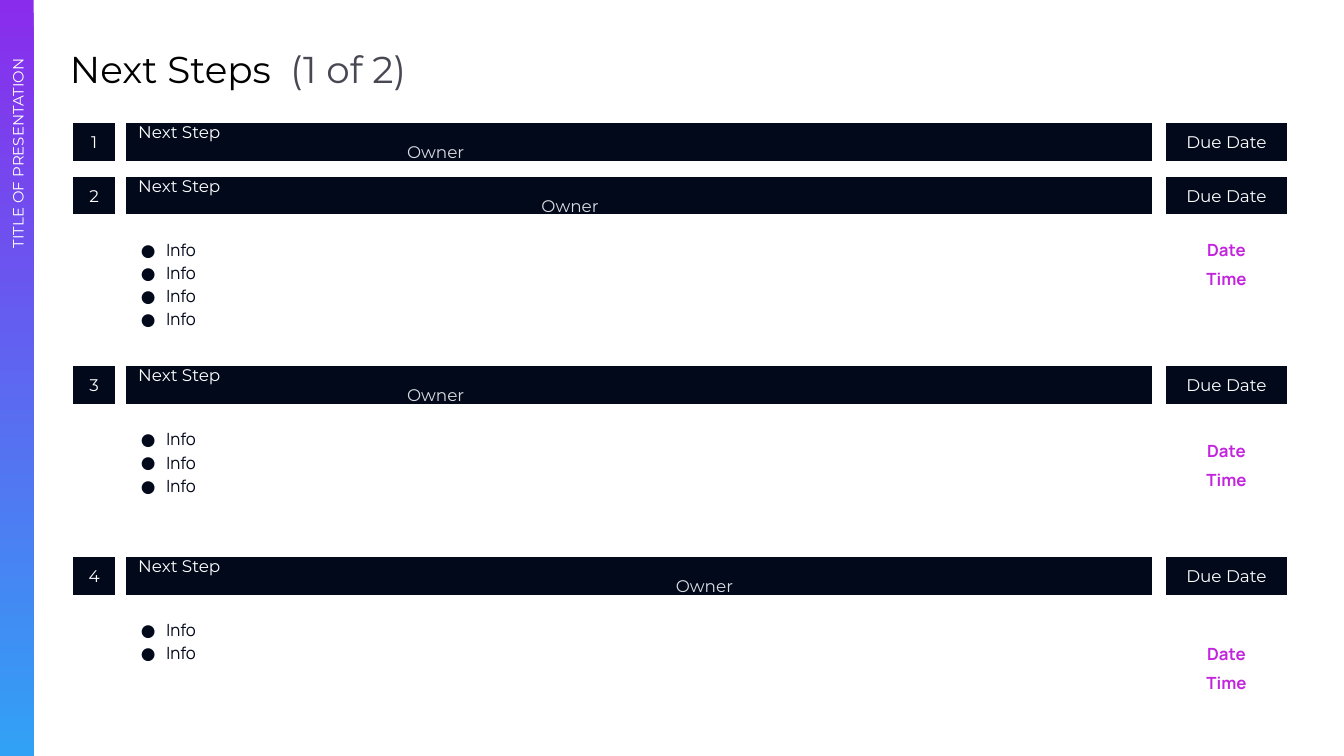
"""Build the "Next Steps (1 of 2)" slide: four numbered steps with owners, info and due dates."""
from lxml import etree
from pptx import Presentation
from pptx.dml.color import RGBColor
from pptx.enum.shapes import MSO_SHAPE
from pptx.enum.text import MSO_ANCHOR, MSO_AUTO_SIZE, PP_ALIGN
from pptx.oxml.ns import qn
from pptx.util import Inches, Pt

RECTANGLE = MSO_SHAPE.RECTANGLE
TOP, MIDDLE = MSO_ANCHOR.TOP, MSO_ANCHOR.MIDDLE
LEFT, CENTER, RIGHT = PP_ALIGN.LEFT, PP_ALIGN.CENTER, PP_ALIGN.RIGHT
NO_AUTOFIT = MSO_AUTO_SIZE.NONE

COLORS = {
    "violet": "8A2CEC",
    "blue": "31A1F5",
    "navy": "02091A",
    "white": "FFFFFF",
    "owner": "DBDCE2",
    "black": "000000",
    "gray": "474853",
    "magenta": "C324DD",
}
HEADING_FONT, BODY_FONT = "Montserrat", "Manrope"
NUMBER_LEFT, STEP_LEFT, INFO_LEFT, DUE_LEFT = 0.54, 0.93, 0.95, 8.67
BAR_HEIGHT, DUE_WIDTH = 0.29, 0.91

STEPS = [
    {"top": 0.91, "owner_tab": 2, "infos": 0},
    {"top": 1.31, "owner_tab": 3, "infos": 4, "date_top": 1.66},
    {"top": 2.72, "owner_tab": 2, "infos": 3, "date_top": 3.16},
    {"top": 4.14, "owner_tab": 4, "infos": 2, "date_top": 4.67},
]


def rgb(name):
    return RGBColor.from_string(COLORS[name])


def write(holder, lines, size, font, color, align=LEFT, anchor=TOP):
    frame = holder.text_frame
    frame.word_wrap = True
    frame.auto_size = NO_AUTOFIT
    frame.vertical_anchor = anchor
    frame.margin_left = frame.margin_right = Inches(0.1)
    frame.margin_top = frame.margin_bottom = Inches(0.1)
    frame.text = "\n".join(lines)
    for paragraph in frame.paragraphs:
        paragraph.alignment = align
        for run in paragraph.runs:
            run.font.size = Pt(size)
            run.font.name = font
            run.font.color.rgb = rgb(color)
    return frame.paragraphs


prs = Presentation()
prs.slide_width = Inches(10)
prs.slide_height = Inches(10) * 9 // 16
slide = prs.slides.add_slide(prs.slide_layouts[5])
shapes = slide.shapes

sidebar = shapes.add_shape(RECTANGLE, 0, 0, Inches(0.25), prs.slide_height)
sidebar.shadow.inherit = False
sidebar.line.fill.background()
sidebar.fill.gradient()
sidebar.fill.gradient_angle = 270
for stop, color, position in zip(sidebar.fill.gradient_stops, ("violet", "blue"), (0, 1)):
    stop.color.rgb = rgb(color)
    stop.position = position

deck_name = shapes.add_textbox(Inches(-2.19), Inches(2.49), Inches(4.78), Inches(0.47))
deck_name.rotation = 270
write(deck_name, ["TITLE OF PRESENTATION"], 8, HEADING_FONT, "white", RIGHT)

title = shapes.title
title.left, title.top = Inches(0.42), Inches(0.24)
title.width, title.height = Inches(9.32), Inches(0.56)
heading = write(title, ["Next Steps"], 20, HEADING_FONT, "black")[0]
for text in (" ", "(1 of 2)"):
    run = heading.add_run()
    run.text = text
    run.font.size = Pt(20)
    run.font.name = HEADING_FONT
    run.font.color.rgb = rgb("gray")
heading.runs[1].font._element.set("spc", "520")

for number, step in enumerate(STEPS, start=1):
    bars = [
        (STEP_LEFT, 7.65, "Next Step\v\tOwner", LEFT),
        (NUMBER_LEFT, 0.32, str(number), CENTER),
        (DUE_LEFT, DUE_WIDTH, "Due Date", CENTER),
    ]
    for left, width, label, align in bars:
        bar = shapes.add_shape(
            RECTANGLE, Inches(left), Inches(step["top"]), Inches(width), Inches(BAR_HEIGHT))
        bar.shadow.inherit = False
        bar.fill.solid()
        bar.fill.fore_color.rgb = rgb("navy")
        bar.line.color.rgb = rgb("white")
        bar.line.width = Pt(0.75)
        paragraph = write(bar, [label], 9, HEADING_FONT, "white", align, MIDDLE)[0]
        if left == STEP_LEFT:
            paragraph.runs[1].font.color.rgb = rgb("owner")
            tabs = etree.SubElement(paragraph._p.get_or_add_pPr(), qn("a:tabLst"))
            etree.SubElement(tabs, qn("a:tab"), pos=str(Inches(step["owner_tab"])), algn="l")

    if not step["infos"]:
        continue

    info = shapes.add_textbox(
        Inches(INFO_LEFT), Inches(step["top"] + 0.35), Inches(7.63), Inches(0.93))
    for paragraph in write(info, ["Info"] * step["infos"], 9, BODY_FONT, "navy"):
        paragraph.line_spacing = 1.15
        properties = paragraph._p.get_or_add_pPr()
        properties.set("marL", str(Inches(0.19)))
        properties.set("indent", str(Inches(-0.19)))
        bullet_color = etree.SubElement(properties, qn("a:buClr"))
        etree.SubElement(bullet_color, qn("a:srgbClr"), val=COLORS["navy"])
        etree.SubElement(properties, qn("a:buSzPts"), val="900")
        etree.SubElement(properties, qn("a:buFont"), typeface=BODY_FONT)
        etree.SubElement(properties, qn("a:buChar"), char="●")

    due = shapes.add_textbox(
        Inches(DUE_LEFT), Inches(step["date_top"]), Inches(DUE_WIDTH), Inches(0.6))
    due_lines = write(due, ["Date", "Time"], 9, BODY_FONT, "magenta", CENTER)
    for paragraph in due_lines:
        paragraph.line_spacing = 1.15
        paragraph.runs[0].font.bold = True
    due_lines[1].space_before = due_lines[1].space_after = Pt(3)

prs.save("out.pptx")
